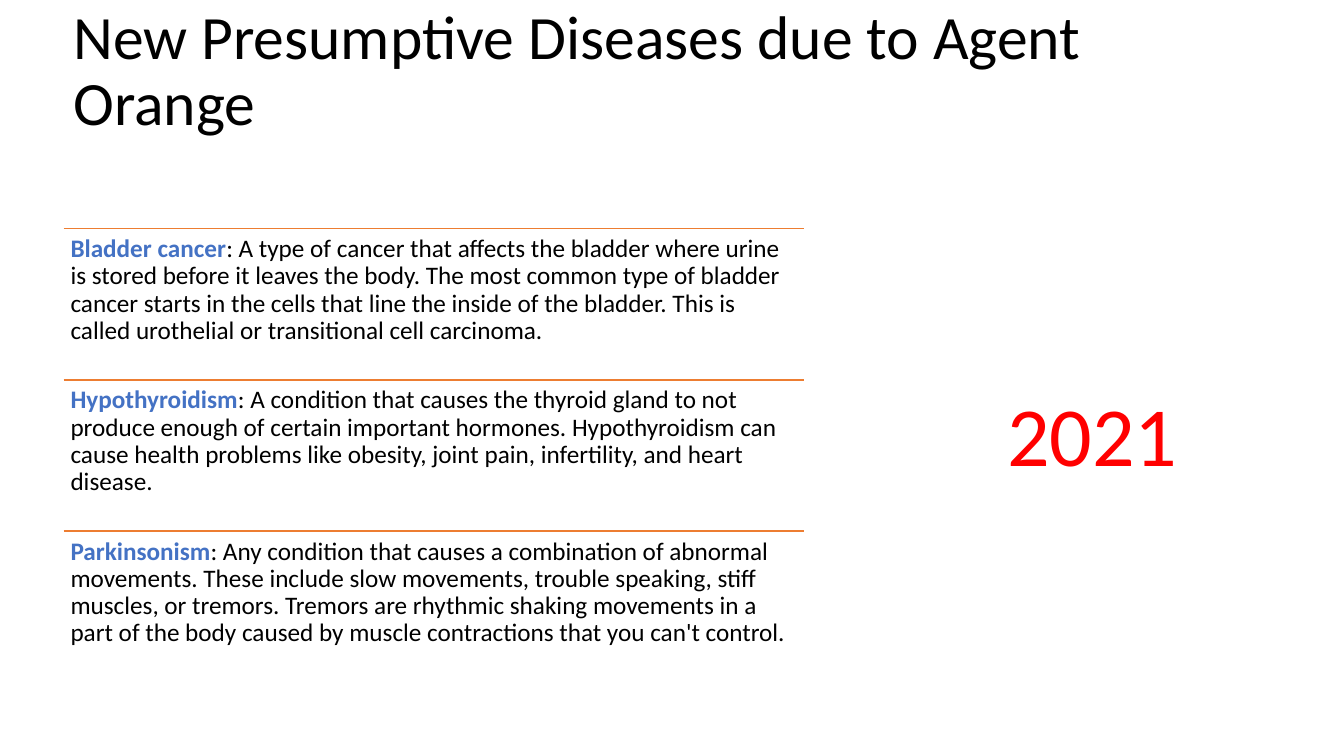
from pptx import Presentation
from pptx.dml.color import RGBColor
from pptx.enum import shapes, text
from pptx.oxml.ns import qn
from pptx.util import Inches, Pt
from lxml import etree

BLACK = RGBColor(0x00, 0x00, 0x00)
BLUE = RGBColor(0x44, 0x72, 0xC4)
ORANGE = RGBColor(0xED, 0x7D, 0x31)
RED = RGBColor(0xFF, 0x00, 0x00)
FONT = "Calibri"

DISEASES = [
    ("Bladder cancer",
     "A type of cancer that affects the bladder where urine is stored before it "
     "leaves the body. The most common type of bladder cancer starts in the cells "
     "that line the inside of the bladder. This is called urothelial or "
     "transitional cell carcinoma."),
    ("Hypothyroidism",
     "A condition that causes the thyroid gland to not produce enough of certain "
     "important hormones. Hypothyroidism can cause health problems like obesity, "
     "joint pain, infertility, and heart disease."),
    ("Parkinsonism",
     "Any condition that causes a combination of abnormal movements. These include "
     "slow movements, trouble speaking, stiff muscles, or tremors. Tremors are "
     "rhythmic shaking movements in a part of the body caused by muscle "
     "contractions that you can't control."),
]


def add_text_frame(slide, left, top, width, height):
    frame = slide.shapes.add_textbox(
        Inches(left), Inches(top), Inches(width), Inches(height)).text_frame
    frame.word_wrap = True
    return frame


def style(paragraph, size, color):
    paragraph.font.name = FONT
    paragraph.font.size = Pt(size)
    paragraph.font.color.rgb = color


def add_title(slide, left, top, width, height):
    frame = add_text_frame(slide, left, top, width, height)
    frame.vertical_anchor = text.MSO_ANCHOR.BOTTOM
    title = frame.paragraphs[0]
    title.text = "New Presumptive Diseases due to Agent Orange"
    title.line_spacing = 0.9
    style(title, 44, BLACK)


def add_disease(slide, left, top, width, height, name, description):
    # Rule above the entry
    rule = slide.shapes.add_connector(
        shapes.MSO_CONNECTOR.STRAIGHT,
        Inches(left), Inches(top), Inches(left + width), Inches(top))
    rule.line.color.rgb = ORANGE
    rule.line.width = Pt(1)
    etree.SubElement(rule._element.spPr, qn("a:effectLst"))

    # Name and description
    frame = add_text_frame(slide, left, top, width, height)
    frame.margin_left = frame.margin_right = Inches(0.07)
    frame.margin_top = frame.margin_bottom = Inches(0.07)
    entry = frame.paragraphs[0]
    entry.line_spacing = 0.9
    style(entry, 18, BLACK)
    term = entry.add_run()
    term.text = name
    term.font.bold = True
    term.font.color.rgb = BLUE
    entry.add_run().text = f": {description}"


def add_disease_list(slide, left, top, width, height):
    row_height = height / len(DISEASES)
    for row, (name, description) in enumerate(DISEASES):
        add_disease(slide, left, top + row * row_height, width, row_height,
                    name, description)


def add_year(slide, left, top, width, height):
    frame = add_text_frame(slide, left, top, width, height)
    frame.word_wrap = False
    frame.auto_size = text.MSO_AUTO_SIZE.SHAPE_TO_FIT_TEXT
    year = frame.paragraphs[0]
    year.text = "2021"
    style(year, 60, RED)


def main():
    deck = Presentation()
    deck.slide_width, deck.slide_height = Inches(13.33), Inches(7.5)
    slide = deck.slides.add_slide(deck.slide_layouts[6])
    add_title(slide, 0.63, 0.26, 12.05, 1.17)
    add_disease_list(slide, 0.63, 2.27, 7.34, 4.5)
    add_year(slide, 9.89, 3.75, 1.91, 1.11)
    deck.save("out.pptx")


if __name__ == "__main__":
    main()
